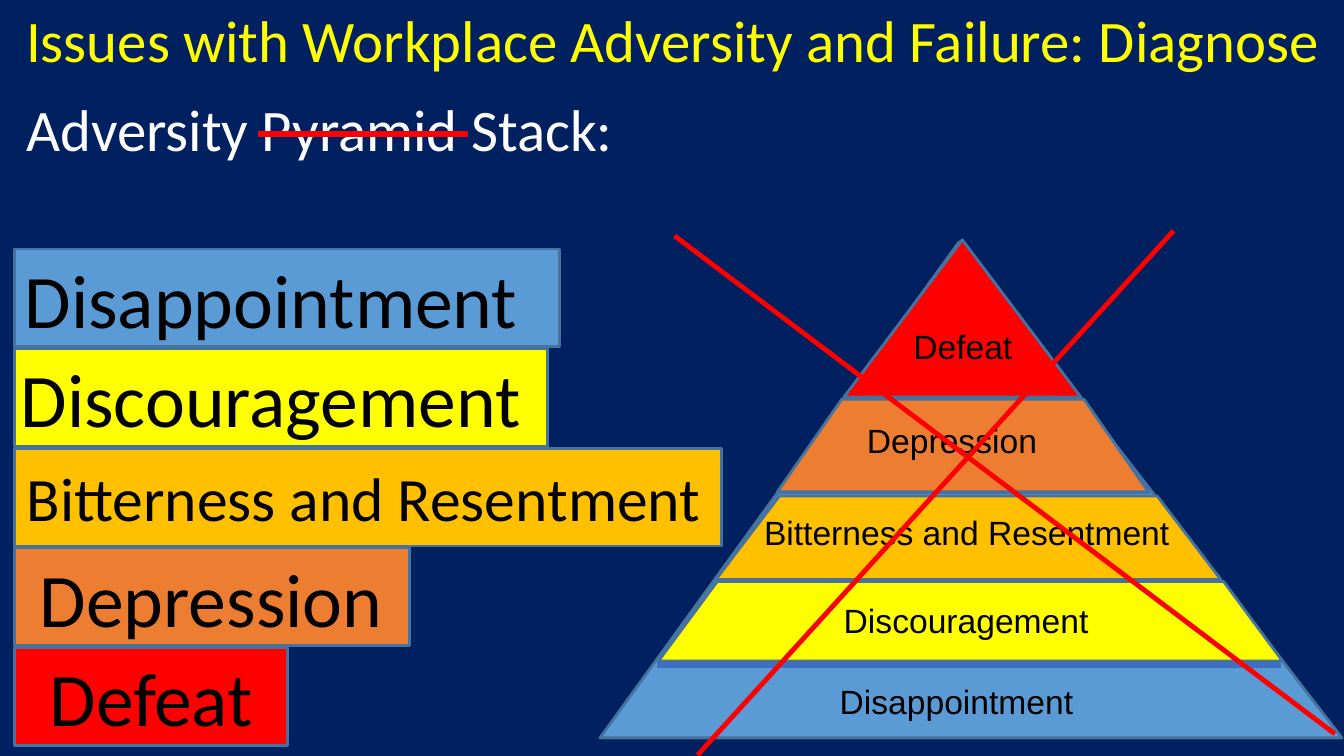
from dataclasses import dataclass

from lxml.etree import SubElement
from pptx import Presentation
from pptx.dml.color import RGBColor
from pptx.enum.shapes import MSO_CONNECTOR as Connector, MSO_SHAPE as Shape
from pptx.enum.text import MSO_ANCHOR as Anchor, MSO_AUTO_SIZE as AutoSize, PP_ALIGN as Align
from pptx.oxml.ns import qn
from pptx.util import Inches, Pt

WIDTH, HEIGHT = Inches(13.33), Inches(7.5)
COLUMN, ROW = WIDTH / 100, HEIGHT / 100
BAR_LEFT, BAR_TOP, BAR_PITCH, BAR_HEIGHT = 1.08, 32.93, 13.18, 12.93
LABEL_HEIGHT = 6.67


@dataclass(frozen=True)
class Theme:
    background: str = "002060"
    title: str = "FFFF00"
    subtitle: str = "FFFFFF"
    text: str = "000000"
    outline: str = "43739E"
    divider: str = "3F6FC3"
    strike: str = "FF0000"
    disappointment: str = "5B9BD5"
    discouragement: str = "FFFF00"
    bitterness: str = "FFC000"
    depression: str = "ED7D31"
    defeat: str = "FF0000"
    heading_font: str = "Calibri"
    label_font: str = "Arial"
    title_size: float = 42
    bar_size: float = 54
    long_bar_size: float = 44
    label_size: float = 24
    outline_width: float = 2
    divider_width: float = 5.25
    strike_width: float = 3.75
    cross_width: float = 3.5


THEME = Theme()

BARS = [
    ("Disappointment", THEME.disappointment, 40.58, 0.75, THEME.bar_size, Align.LEFT),
    ("Discouragement", THEME.discouragement, 39.68, 0.45, THEME.bar_size, Align.LEFT),
    ("Bitterness and Resentment", THEME.bitterness, 52.59, 0.9, THEME.long_bar_size, Align.LEFT),
    ("Depression", THEME.depression, 29.41, 1.88, THEME.bar_size, Align.LEFT),
    ("Defeat", THEME.defeat, 20.33, 0, THEME.bar_size, Align.CENTER),
]
BASE = (Shape.ISOSCELES_TRIANGLE, (44.64, 32, 55.21, 65.6), THEME.disappointment, 0.484)
LAYERS = [
    (Shape.ISOSCELES_TRIANGLE, (62.79, 31.73, 17.63, 20.8), THEME.defeat, 0.5),
    (Shape.TRAPEZOID, (57.84, 52.8, 27.61, 12.27), THEME.depression, 0.695),
    (Shape.TRAPEZOID, (53.26, 65.6, 37.58, 11.07), THEME.bitterness, 0.761),
    (Shape.TRAPEZOID, (48.99, 76.93, 46.44, 10.53), THEME.discouragement, 0.739),
]
DIVIDERS = [(62.64, 80.35, 53.2), (57.99, 85.6, 64.8), (53.26, 90.77, 76.53), (48.91, 95.35, 87.87)]
LABELS = [
    ("Defeat", 67.22, 42.4, 26.71),
    ("Depression", 63.77, 54.93, 20.41),
    ("Bitterness and Resentment", 56.11, 67.07, 34.88),
    ("Discouragement", 62.04, 78.67, 20.71),
    ("Disappointment", 61.74, 89.47, 20.48),
]
STRIKES = [
    ((19.2, 17.73), (34.81, 17.73), THEME.strike_width),
    ((50.19, 31.2), (99.32, 97.07), THEME.cross_width),
    ((87.32, 30.53), (51.91, 99.87), THEME.cross_width),
]


def set_all(target, values):
    for name, value in values.items():
        setattr(target, name, value)


def point(column, row):
    return round(column * COLUMN), round(row * ROW)


def box(left, top, width, height):
    return *point(left, top), *point(width, height)


def write(paragraph, text, font, size, color, align=Align.LEFT):
    run = paragraph.add_run()
    run.text = text
    paragraph.alignment = align
    set_all(run.font, {"name": font, "size": Pt(size)})
    run.font.color.rgb = RGBColor.from_string(color)


def add_title(slide):
    title = slide.shapes.title
    set_all(title, dict(zip(("left", "top", "width", "height"), box(1.2, -0.13, 98.8, 40.67))))
    frame = title.text_frame
    set_all(frame, {"word_wrap": True, "auto_size": AutoSize.NONE, "vertical_anchor": Anchor.TOP})
    lines = [
        ("Issues with Workplace Adversity and Failure: Diagnose", THEME.title, 0),
        ("Adversity Pyramid Stack:", THEME.subtitle, 13),
    ]
    for index, (text, color, gap) in enumerate(lines):
        paragraph = frame.add_paragraph() if index else frame.paragraphs[0]
        set_all(paragraph, {"line_spacing": 1.0, "space_before": Pt(gap)})
        write(paragraph, text, THEME.heading_font, THEME.title_size, color)


def add_filled(slide, kind, place, fill, adjustment=None):
    shape = slide.shapes.add_shape(kind, *box(*place))
    shape.shadow.inherit = False
    shape.fill.solid()
    shape.fill.fore_color.rgb = RGBColor.from_string(fill)
    shape.line.color.rgb = RGBColor.from_string(THEME.outline)
    shape.line.width = Pt(THEME.outline_width)
    if adjustment is not None:
        shape.adjustments[0] = adjustment
    return shape


def add_bar(slide, index, text, fill, width, inset, size, align):
    place = (BAR_LEFT, BAR_TOP + index * BAR_PITCH, width, BAR_HEIGHT)
    frame = add_filled(slide, Shape.RECTANGLE, place, fill).text_frame
    set_all(frame, {
        "word_wrap": True,
        "vertical_anchor": Anchor.MIDDLE,
        "margin_left": round(inset * COLUMN),
        "margin_right": 0,
    })
    write(frame.paragraphs[0], text, THEME.heading_font, size, THEME.text, align)


def add_label(slide, text, left, top, width):
    frame = slide.shapes.add_textbox(*box(left, top, width, LABEL_HEIGHT)).text_frame
    frame.word_wrap = True
    write(frame.paragraphs[0], text, THEME.label_font, THEME.label_size, THEME.text)


def add_line(slide, start, end, color, width):
    line = slide.shapes.add_connector(Connector.STRAIGHT, *point(*start), *point(*end))
    line.line.color.rgb = RGBColor.from_string(color)
    line.line.width = Pt(width)
    SubElement(line._element.spPr, qn("a:effectLst"))


def main():
    presentation = Presentation()
    set_all(presentation, {"slide_width": WIDTH, "slide_height": HEIGHT})
    slide = presentation.slides.add_slide(presentation.slide_layouts[5])
    slide.background.fill.solid()
    slide.background.fill.fore_color.rgb = RGBColor.from_string(THEME.background)
    add_title(slide)
    add_filled(slide, *BASE)
    for left, right, row in DIVIDERS:
        add_line(slide, (left, row), (right, row), THEME.divider, THEME.divider_width)
    for layer in LAYERS:
        add_filled(slide, *layer)
    for label in LABELS:
        add_label(slide, *label)
    for index, bar in enumerate(BARS):
        add_bar(slide, index, *bar)
    for start, end, width in STRIKES:
        add_line(slide, start, end, THEME.strike, width)
    presentation.save("out.pptx")


if __name__ == "__main__":
    main()
